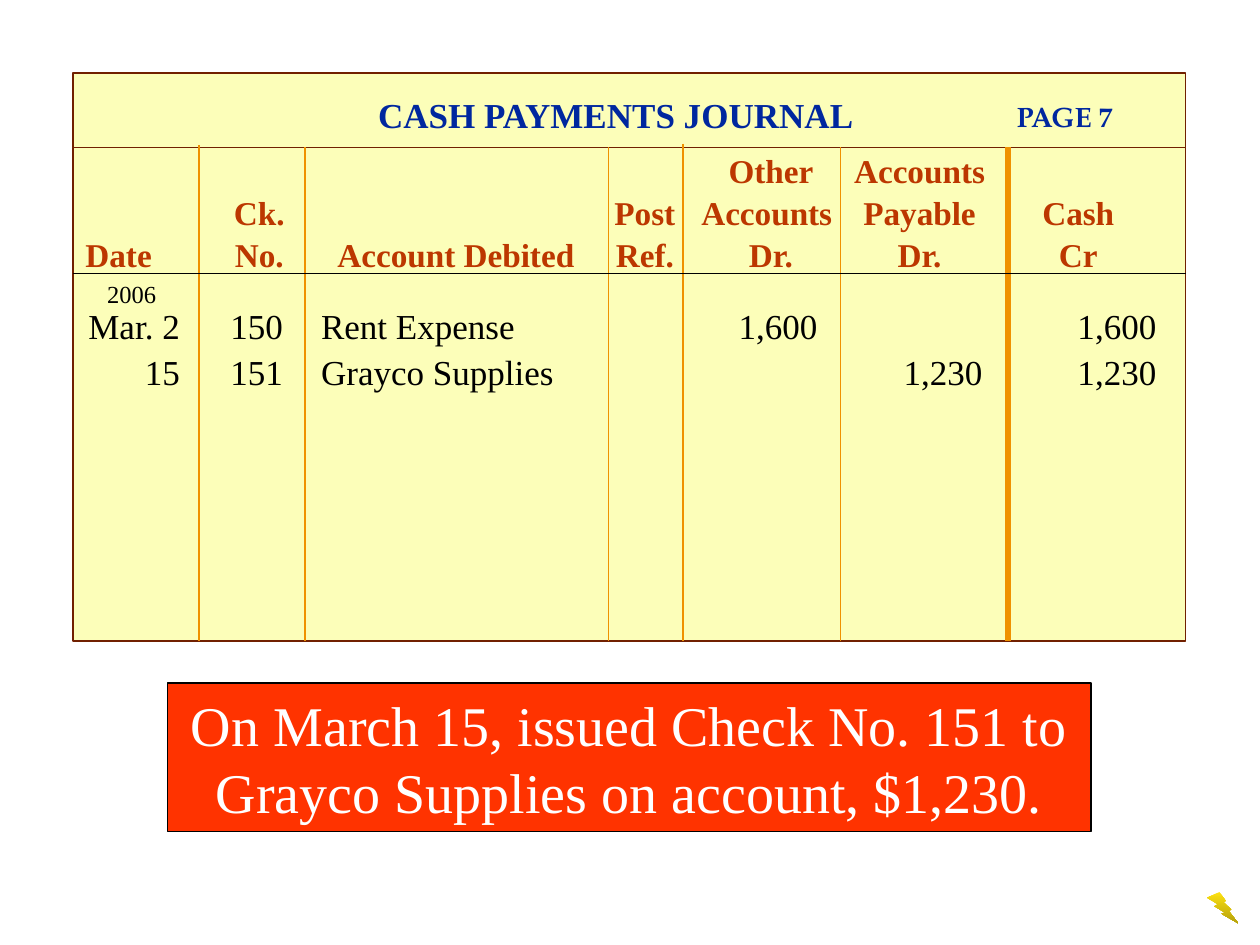
from typing import NamedTuple

from lxml import etree
from pptx import Presentation
from pptx.dml.color import RGBColor
from pptx.enum.shapes import MSO_CONNECTOR, MSO_SHAPE
from pptx.enum.text import MSO_ANCHOR, PP_ALIGN
from pptx.oxml.ns import qn
from pptx.util import Inches, Pt

RECTANGLE, BOLT = MSO_SHAPE.RECTANGLE, MSO_SHAPE.LIGHTNING_BOLT
STRAIGHT = MSO_CONNECTOR.STRAIGHT
TOP, MIDDLE = MSO_ANCHOR.TOP, MSO_ANCHOR.MIDDLE
LEFT, CENTER = PP_ALIGN.LEFT, PP_ALIGN.CENTER

PAPER = RGBColor(0xFC, 0xFE, 0xB9)
BROWN = RGBColor(0x71, 0x20, 0x00)
ORANGE = RGBColor(0xEF, 0x91, 0x00)
BLUE = RGBColor(0x00, 0x27, 0x9F)
RUST = RGBColor(0xBC, 0x37, 0x00)
RED = RGBColor(0xFF, 0x33, 0x00)
BLACK = RGBColor(0x00, 0x00, 0x00)
WHITE = RGBColor(0xFF, 0xFF, 0xFF)
BOLT_LIGHT = RGBColor(0xFD, 0xE1, 0x11)
BOLT_DARK = RGBColor(0xB5, 0xA1, 0x0C)

SERIF = "Times New Roman"
PAGE_LEFT, PAGE_WIDTH = 0.58, 8.83
HEAD_TOP, BODY_TOP, BODY_BOTTOM = 0.58, 1.17, 5.09
RULE_TOP = 2.17


class Box(NamedTuple):
    left: float
    top: float
    width: float
    height: float


class Style(NamedTuple):
    size: float
    color: RGBColor
    bold: bool = False
    font: str = SERIF
    align: PP_ALIGN = LEFT
    anchor: MSO_ANCHOR = TOP
    spacing: float = 1.0
    tabs: tuple = ()
    wrap: bool = True


class Rule(NamedTuple):
    x: float
    top: float = BODY_TOP
    weight: float = 1


class Entry(NamedTuple):
    top: float
    text: str


HEADING_TABS = tuple((x, "ctr") for x in (1.38, 2.94, 4.44, 5.44, 6.62, 7.88))
ENTRY_TABS = ((0.75, "r"), (1.15, "l"), (1.87, "l"), (4.44, "ctr"),
              (5.81, "r"), (7.12, "r"), (8.5, "r"))

TITLE = Style(20, BLUE, bold=True)
PAGE_NUMBER = Style(16, BLUE, bold=True, font="TeX Gyre Pagella", wrap=False)
HEADING = Style(19, RUST, bold=True, spacing=1.05, tabs=HEADING_TABS)
YEAR = Style(14, BLACK, align=CENTER, anchor=MIDDLE)
ENTRY = Style(20, BLACK, anchor=MIDDLE, tabs=ENTRY_TABS)
CALLOUT = Style(32, WHITE, align=CENTER, anchor=MIDDLE)

HEADINGS = [
    "\t\t\t\tOther\tAccounts",
    "\tCk.\t\tPost\tAccounts \tPayable\tCash",
    "Date\tNo.\tAccount Debited\tRef.\tDr.\tDr.\tCr",
]
ENTRIES = [
    Entry(2.37, "\tMar. 2\t150\tRent Expense\t\t1,600\t\t1,600"),
    Entry(2.73, "\t15\t151\tGrayco Supplies\t\t\t1,230\t1,230"),
]
COLUMN_RULES = [Rule(5.42, 1.14), Rule(1.58, 1.15), Rule(2.42), Rule(4.83),
                Rule(8, weight=3), Rule(6.67)]


def inches(box: Box) -> list:
    return [Inches(value) for value in box]


def write(shape, lines: list, style: Style) -> None:
    frame = shape.text_frame
    frame.word_wrap = style.wrap
    frame.vertical_anchor = style.anchor
    for index, line in enumerate(lines):
        paragraph = frame.add_paragraph() if index else frame.paragraphs[0]
        paragraph.alignment = style.align
        paragraph.line_spacing = style.spacing
        if style.tabs:
            properties = paragraph._p.get_or_add_pPr()
            tab_list = etree.SubElement(properties, qn("a:tabLst"))
            for position, kind in style.tabs:
                etree.SubElement(tab_list, qn("a:tab"),
                                 pos=str(Inches(position)), algn=kind)
        run = paragraph.add_run()
        run.text = line
        run.font.name = style.font
        run.font.size = Pt(style.size)
        run.font.bold = style.bold
        run.font.color.rgb = style.color


def add_text(slide, box: Box, lines: list, style: Style) -> None:
    write(slide.shapes.add_textbox(*inches(box)), lines, style)


def add_panel(slide, box: Box, fill: RGBColor, line: RGBColor):
    panel = slide.shapes.add_shape(RECTANGLE, *inches(box))
    panel.shadow.inherit = False
    panel.fill.solid()
    panel.fill.fore_color.rgb = fill
    panel.line.color.rgb = line
    panel.line.width = Pt(1)
    return panel


def add_line(slide, start: tuple, end: tuple, color: RGBColor, weight: float = 1) -> None:
    ends = [Inches(value) for value in start + end]
    connector = slide.shapes.add_connector(STRAIGHT, *ends)
    connector.line.color.rgb = color
    connector.line.width = Pt(weight)
    etree.SubElement(connector._element.spPr, qn("a:effectLst"))


def add_bolt(slide, box: Box) -> None:
    bolt = slide.shapes.add_shape(BOLT, *inches(box))
    bolt.shadow.inherit = False
    bolt.line.fill.background()
    bolt.fill.gradient()
    bolt.fill.gradient_angle = 270
    for stop, color in zip(bolt.fill.gradient_stops, (BOLT_LIGHT, BOLT_DARK)):
        stop.color.rgb = color


def main() -> None:
    presentation = Presentation()
    presentation.slide_width, presentation.slide_height = Inches(10), Inches(7.5)
    slide = presentation.slides.add_slide(presentation.slide_layouts[5])

    # Journal page
    for top, bottom in ((BODY_TOP, BODY_BOTTOM), (HEAD_TOP, BODY_TOP)):
        add_panel(slide, Box(PAGE_LEFT, top, PAGE_WIDTH, bottom - top), PAPER, BROWN)

    # Title, brought in front of the page
    title = slide.shapes.title
    title.left, title.top, title.width, title.height = inches(Box(2.9, 0.69, 4.35, 0.43))
    write(title, ["CASH PAYMENTS JOURNAL"], TITLE)
    title.element.getparent().append(title.element)
    add_text(slide, Box(7.97, 0.74, 1.01, 0.36), ["PAGE 7"], PAGE_NUMBER)

    # Column headings and rules
    add_text(slide, Box(PAGE_LEFT, 1.13, PAGE_WIDTH, 1.05), HEADINGS, HEADING)
    for rule in COLUMN_RULES:
        add_line(slide, (rule.x, rule.top), (rule.x, BODY_BOTTOM), ORANGE, rule.weight)
    add_line(slide, (PAGE_LEFT, RULE_TOP), (PAGE_LEFT + PAGE_WIDTH, RULE_TOP), BLACK)

    # Transaction callout
    callout = add_panel(slide, Box(1.33, 5.42, 7.33, 1.18), RED, BLACK)
    write(callout, ["On March 15, issued Check No. 151 to Grayco Supplies "
                    "on account, $1,230."], CALLOUT)

    # Journal entries
    add_text(slide, Box(0.67, RULE_TOP, 0.75, 0.33), ["2006"], YEAR)
    for entry in ENTRIES:
        add_text(slide, Box(PAGE_LEFT, entry.top, PAGE_WIDTH, 0.43), [entry.text], ENTRY)

    # Corner marker
    add_bolt(slide, Box(9.58, 7.08, 0.25, 0.25))

    presentation.save("out.pptx")


if __name__ == "__main__":
    main()
